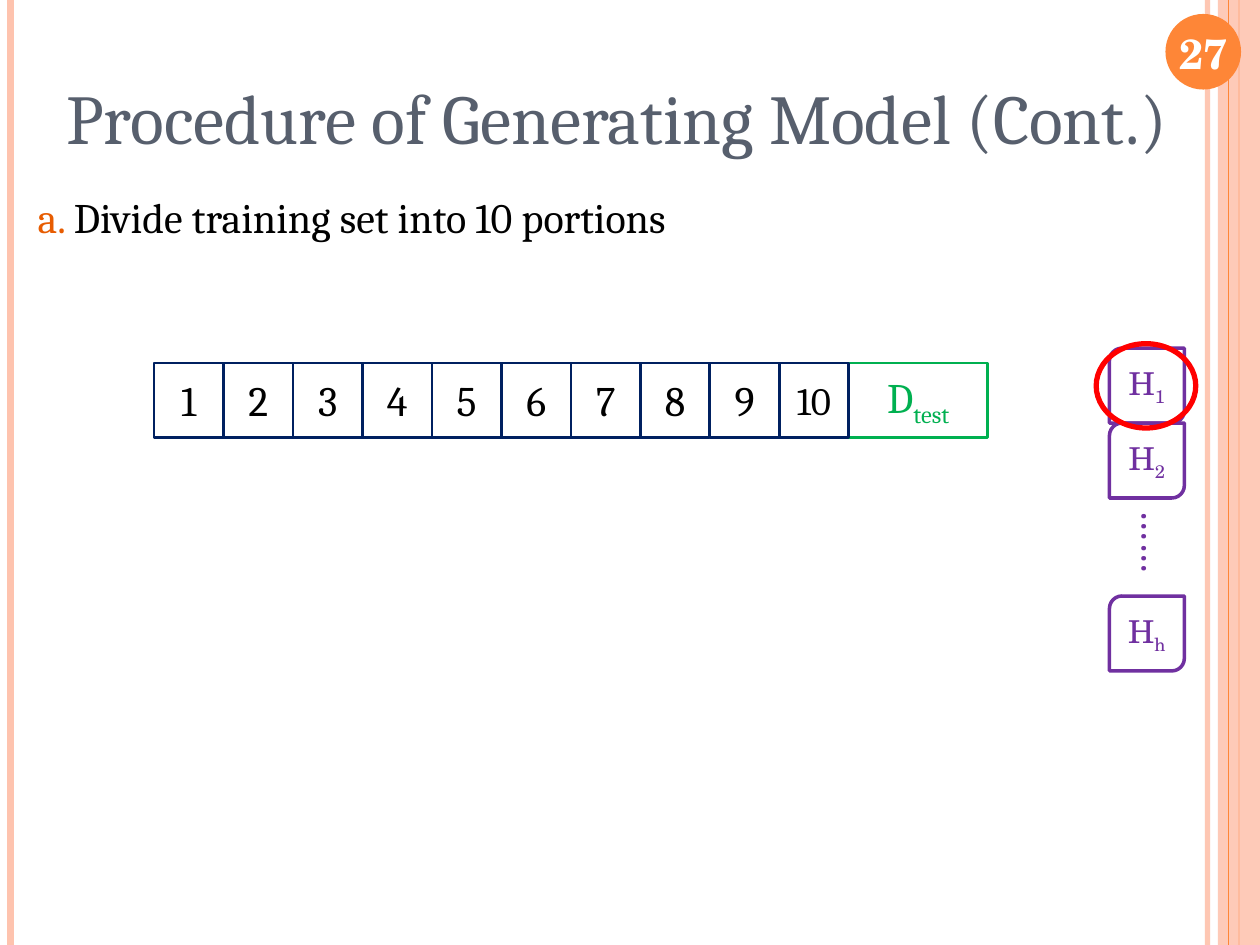
import pptx
import pptx.dml.color
import pptx.enum.shapes
import pptx.enum.text
import pptx.oxml.ns
import pptx.util
from lxml import etree

Pt = pptx.util.Pt
RGBColor = pptx.dml.color.RGBColor
Shape = pptx.enum.shapes.MSO_SHAPE
Align = pptx.enum.text.PP_ALIGN
Anchor = pptx.enum.text.MSO_ANCHOR
qn = pptx.oxml.ns.qn

PEACH = RGBColor(0xFE, 0xC3, 0xAE)
ORANGE = RGBColor(0xFE, 0x86, 0x37)
RUST = RGBColor(0xE7, 0x5C, 0x01)
SLATE = RGBColor(0x57, 0x5F, 0x6D)
NAVY = RGBColor(0x00, 0x20, 0x60)
GREEN = RGBColor(0x00, 0xB0, 0x50)
PURPLE = RGBColor(0x70, 0x30, 0xA0)
RED = RGBColor(0xFF, 0x00, 0x00)
WHITE = RGBColor(0xFF, 0xFF, 0xFF)
BLACK = RGBColor(0x00, 0x00, 0x00)
SERIF = "Cambria"
SCHOOL = "TeX Gyre Schola"


def set_opacity(element, percent):
    """Give the first colour inside the element an opacity."""
    color = next(element.iter(qn("a:srgbClr")))
    etree.SubElement(color, qn("a:alpha"), val=str(percent * 1000))


def add_stripe(slide, x, color, weight, opacity=100):
    """Draw a vertical line over the full slide height."""
    stripe = slide.shapes.add_connector(
        pptx.enum.shapes.MSO_CONNECTOR.STRAIGHT, Pt(x), Pt(0), Pt(x), Pt(540))
    stripe.line.color.rgb = color
    stripe.line.width = Pt(weight)
    properties = stripe.element.find(qn("p:spPr"))
    etree.SubElement(properties, qn("a:effectLst"))
    if opacity < 100:
        set_opacity(properties, opacity)


def add_block(slide, kind, bounds, fill=None, line=None, weight=1.5):
    """Draw a preset shape, filled or outlined."""
    block = slide.shapes.add_shape(kind, *map(Pt, bounds))
    block.shadow.inherit = False
    if fill is None:
        block.fill.background()
    else:
        block.fill.solid()
        block.fill.fore_color.rgb = fill
    if line is None:
        block.line.fill.background()
    else:
        block.line.color.rgb = line
        block.line.width = Pt(weight)
    return block


def write(shape, spans, size, font, align=Align.CENTER, anchor=Anchor.MIDDLE,
          before=0, margin=0):
    """Write one paragraph of (text, colour) spans into a shape."""
    frame = shape.text_frame
    frame.word_wrap = True
    frame.vertical_anchor = anchor
    frame.margin_left = frame.margin_right = Pt(margin)
    frame.margin_top = frame.margin_bottom = Pt(margin / 2)
    para = frame.paragraphs[0]
    para.alignment = align
    para.space_before = Pt(before)
    for text, color in spans:
        span = para.add_run()
        span.text = text
        span.font.size = Pt(size)
        span.font.name = font
        span.font.color.rgb = color
    return para


def add_text(slide, bounds, spans, size, font=SERIF, **layout):
    """Add a text box and return it."""
    box = slide.shapes.add_textbox(*map(Pt, bounds))
    write(box, spans, size, font, **layout)
    return box


def write_indexed(shape, letter, index, color, size, font, before=0):
    """Write a letter followed by its subscript."""
    para = write(shape, [(letter, color), (index, color)], size, font, before=before)
    para.runs[1].font._element.set("baseline", "-25000")


def add_decoration(slide):
    """Draw the side stripes and the page number badge."""
    add_stripe(slide, 690, PEACH, 3, 93)
    add_stripe(slide, 6, PEACH, 4.5)
    add_stripe(slide, 708, ORANGE, 1.5)
    band = add_block(slide, Shape.RECTANGLE, (696, 0, 24, 540), PEACH)
    set_opacity(band.element, 87)
    add_stripe(slide, 702, ORANGE, 0.75)
    add_block(slide, Shape.OVAL, (666, 8, 43.2, 43.2), ORANGE)
    number = add_text(slide, (664, 9.4, 48, 41), [("27", WHITE)], 24, SCHOOL)
    number.text_frame.paragraphs[0].runs[0].font.bold = True


def add_portions(slide):
    """Draw the row of ten training portions and the test set."""
    left, top, width, height = 88, 207.4, 39.7, 42.5
    test = add_block(slide, Shape.RECTANGLE,
                     (left + 10 * width, top, 2 * width, height), line=GREEN)
    write_indexed(test, "D", "test", GREEN, 24, SERIF, before=6)
    for index in range(10):
        portion = add_block(slide, Shape.RECTANGLE,
                            (left + index * width, top, width, height), line=NAVY)
        label = str(index + 1)
        size = 24 if len(label) == 1 else 22.2
        write(portion, [(label, BLACK)], size, SERIF, before=6)


def add_hypotheses(slide):
    """Draw the column of hypotheses with the first one circled."""
    side, top = 42.8, 199
    for index, y in (("1", top), ("2", top + side), ("h", 340.6)):
        card = add_block(slide, Shape.ROUND_2_DIAG_RECTANGLE,
                         (634, y, side, side), WHITE, PURPLE, 2)
        write_indexed(card, "H", index, PURPLE, 18, SCHOOL)
    dots = add_text(slide, (630.7, 292.3, 62.6, 34), [("……", PURPLE)], 24,
                    before=6, margin=7.2)
    dots.rotation = 90
    add_block(slide, Shape.OVAL, (626.4, 196.4, 56.9, 48.2), line=RED, weight=3)


def main():
    """Build the slide and save it."""
    deck = pptx.Presentation()
    deck.slide_width, deck.slide_height = Pt(720), Pt(540)
    slide = deck.slides.add_slide(deck.slide_layouts[6])
    add_decoration(slide)
    add_text(slide, (14.4, 21.6, 676, 90),
             [("Procedure of Generating Model (Cont.)", SLATE)], 40, margin=7.2)
    add_text(slide, (14.4, 106, 698, 51),
             [("a. ", RUST), ("Divide training set into 10 portions", BLACK)], 24,
             align=Align.LEFT, anchor=Anchor.TOP, before=6, margin=7.2)
    add_portions(slide)
    add_hypotheses(slide)
    deck.save("out.pptx")


if __name__ == "__main__":
    main()
